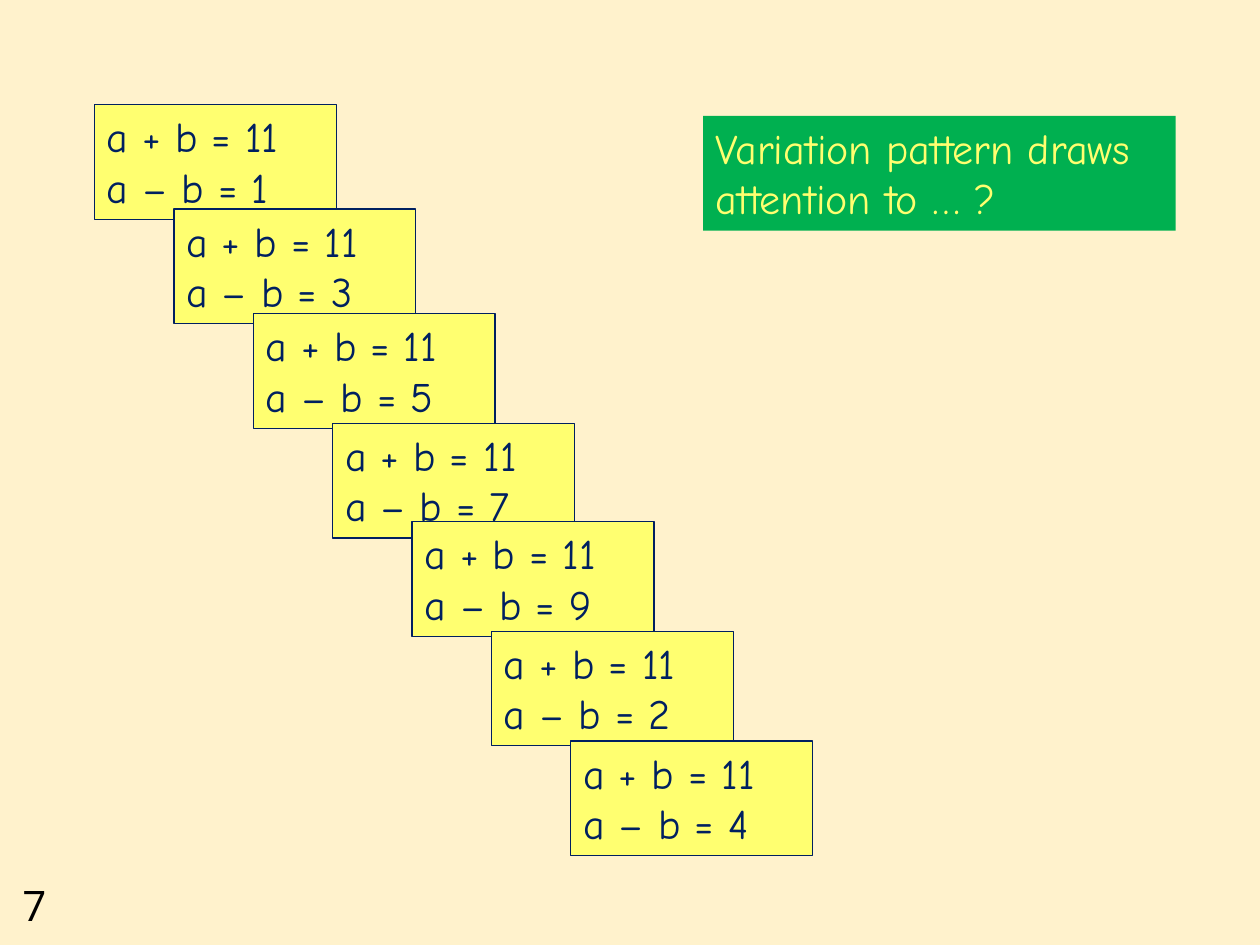
from pptx import Presentation
from pptx.dml.color import RGBColor
from pptx.enum.shapes import MSO_SHAPE
from pptx.enum.text import MSO_ANCHOR, PP_ALIGN
from pptx.util import Inches, Pt

SLIDE_WIDTH, SLIDE_HEIGHT = 10, 7.5
CREAM, YELLOW, GREEN, NAVY, BLACK = "FFF2CC", "FFFF70", "00B050", "002060", "000000"

# The cards step right evenly; each row has its own top
CARD_LEFT, CARD_STEP = 0.75, 0.63
CARD_WIDTH, BOX_HEIGHT = 1.92, 0.91
CARDS = [(0.83, 1), (1.66, 3), (2.49, 5), (3.36, 7), (4.14, 9), (5.01, 2), (5.88, 4)]


def color(hex_string):
    return RGBColor.from_string(hex_string)


def write_text(shape, text, text_color, font_name):
    text_frame = shape.text_frame
    text_frame.word_wrap = True
    text_frame.vertical_anchor = MSO_ANCHOR.TOP
    text_frame.text = text
    for paragraph in text_frame.paragraphs:
        paragraph.alignment = PP_ALIGN.LEFT
        for run in paragraph.runs:
            run.font.name = font_name
            run.font.size = Pt(24)
            run.font.color.rgb = color(text_color)


def add_box(slide, left, top, width, text, fill, text_color, line=None):
    shape = slide.shapes.add_shape(
        MSO_SHAPE.RECTANGLE, Inches(left), Inches(top), Inches(width), Inches(BOX_HEIGHT))
    shape.shadow.inherit = False
    shape.fill.solid()
    shape.fill.fore_color.rgb = color(fill)
    if line:
        shape.line.color.rgb = color(line)
        shape.line.width = Pt(0.75)
    else:
        shape.line.fill.background()
    write_text(shape, text, text_color, "Comic Neue")


def add_page_number(slide, number):
    text_box = slide.shapes.add_textbox(
        Inches(0.08), Inches(6.93), Inches(0.75), Inches(0.5))
    write_text(text_box, number, BLACK, "Open Sans")


def main():
    presentation = Presentation()
    presentation.slide_width = Inches(SLIDE_WIDTH)
    presentation.slide_height = Inches(SLIDE_HEIGHT)
    slide = presentation.slides.add_slide(presentation.slide_layouts[6])

    # Background and page number
    slide.background.fill.solid()
    slide.background.fill.fore_color.rgb = color(CREAM)
    add_page_number(slide, "7")

    # Staircase of equation pairs
    for column, (top, difference) in enumerate(CARDS):
        add_box(slide, CARD_LEFT + column * CARD_STEP, top, CARD_WIDTH,
                f"a + b = 11\na – b = {difference}", YELLOW, NAVY, line=NAVY)

    # Question
    add_box(slide, 5.58, 0.92, 3.75,
            "Variation pattern draws attention to … ?", GREEN, YELLOW)

    presentation.save("out.pptx")


if __name__ == "__main__":
    main()
